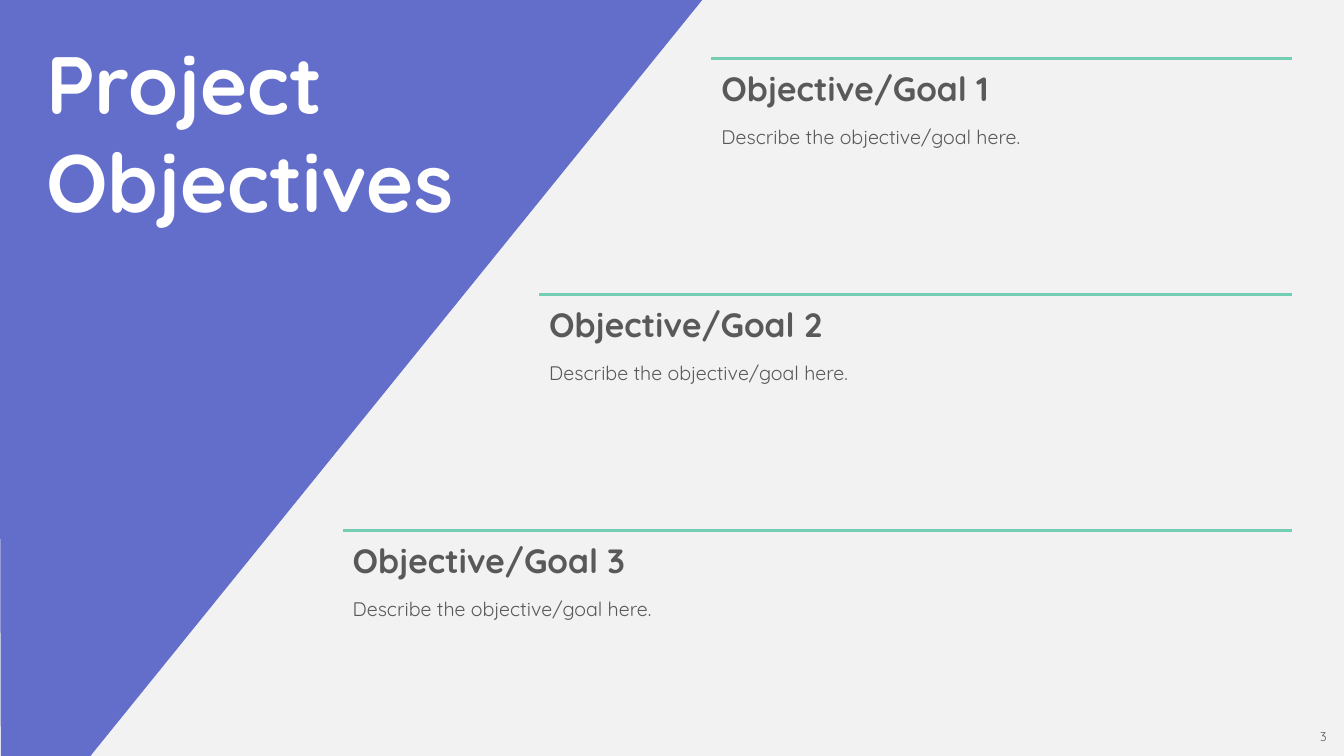
from lxml import etree
from pptx import Presentation
from pptx import util as u
from pptx.dml.color import RGBColor
from pptx.enum import shapes, text
from pptx.oxml.ns import qn

COLORS = {"bg": "F2F2F2", "panel": "636DCA", "title": "FFFFFF",
          "body": "595959", "rule": "74CEB3"}
FONT = "Quicksand"
WIDTH, HEIGHT = u.Inches(13.33), u.Inches(7.5)
COLS, ROWS = 16, 9
GOAL_LEFTS = (8.47, 6.42, 4.08)
GOAL_RIGHT, GOAL_TOP, GOAL_STEP = 15.38, 0.7, 2.81


def col(n):
    """Return the length of n grid columns."""
    return u.Emu(round(WIDTH * n / COLS))


def row(n):
    """Return the length of n grid rows."""
    return u.Emu(round(HEIGHT * n / ROWS))


def rgb(name):
    """Look up a named colour."""
    return RGBColor.from_string(COLORS[name])


def add_text_frame(s, x, y, w, h):
    """Add a wrapping text box on the grid and return its frame."""
    tf = s.shapes.add_textbox(col(x), row(y), col(w), row(h)).text_frame
    tf.word_wrap = True
    return tf


def add_run(p, words, size, color, bold=False):
    """Append a styled run to a paragraph."""
    r = p.add_run()
    r.text = words
    r.font.name, r.font.size, r.font.bold = FONT, u.Pt(size), bold
    r.font.color.rgb = rgb(color)


def add_panel(s, points):
    """Draw the slanted panel through the grid points."""
    start, *rest = [(col(x), row(y)) for x, y in points]
    builder = s.shapes.build_freeform(*start)
    builder.add_line_segments(rest, close=True)
    sp = builder.convert_to_shape()
    sp.shadow.inherit = False
    sp.fill.solid()
    sp.fill.fore_color.rgb = rgb("panel")
    sp.line.fill.background()


def add_title(s, lines):
    """Add the title with a line break between its lines."""
    p = add_text_frame(s, 0.43, 0.34, 5.92, 2.46).paragraphs[0]
    for i, line in enumerate(lines):
        if i:
            p.add_line_break()
        add_run(p, line, 58, "title", True)


def add_rule(s, x1, x2, y):
    """Draw a horizontal rule."""
    line = s.shapes.add_connector(shapes.MSO_CONNECTOR.STRAIGHT,
                                  col(x1), row(y), col(x2), row(y))
    line.line.color.rgb = rgb("rule")
    line.line.width = u.Pt(2)
    etree.SubElement(line._element.spPr, qn("a:effectLst"))


def add_goal(s, x, y, heading, detail):
    """Add a goal's rule, heading and description."""
    add_rule(s, x, GOAL_RIGHT, y)
    tf = add_text_frame(s, x, y + 0.05, GOAL_RIGHT - x, 1.09)
    add_run(tf.paragraphs[0], heading, 24, "body", True)
    p = tf.add_paragraph()
    p.space_before = u.Pt(12)
    add_run(p, detail, 14, "body")


def add_page_number(s, number):
    """Add the page number at the bottom right."""
    p = add_text_frame(s, 15.47, 8.62, 0.44, 0.3).paragraphs[0]
    p.alignment = text.PP_ALIGN.RIGHT
    add_run(p, number, 9, "body")


def main():
    """Build and save the slide."""
    prs = Presentation()
    prs.slide_width, prs.slide_height = WIDTH, HEIGHT
    s = prs.slides.add_slide(prs.slide_layouts[6])
    s.background.fill.solid()
    s.background.fill.fore_color.rgb = rgb("bg")
    add_panel(s, [(0, 0), (8.36, 0), (1.06, 9.02), (0.01, 9.02), (0, 5.3)])
    add_title(s, ["Project ", "Objectives"])
    for i, x in enumerate(GOAL_LEFTS):
        add_goal(s, x, GOAL_TOP + i * GOAL_STEP, f"Objective/Goal {i + 1}",
                 "Describe the objective/goal here.")
    add_page_number(s, "3")
    prs.save("out.pptx")


if __name__ == "__main__":
    main()
